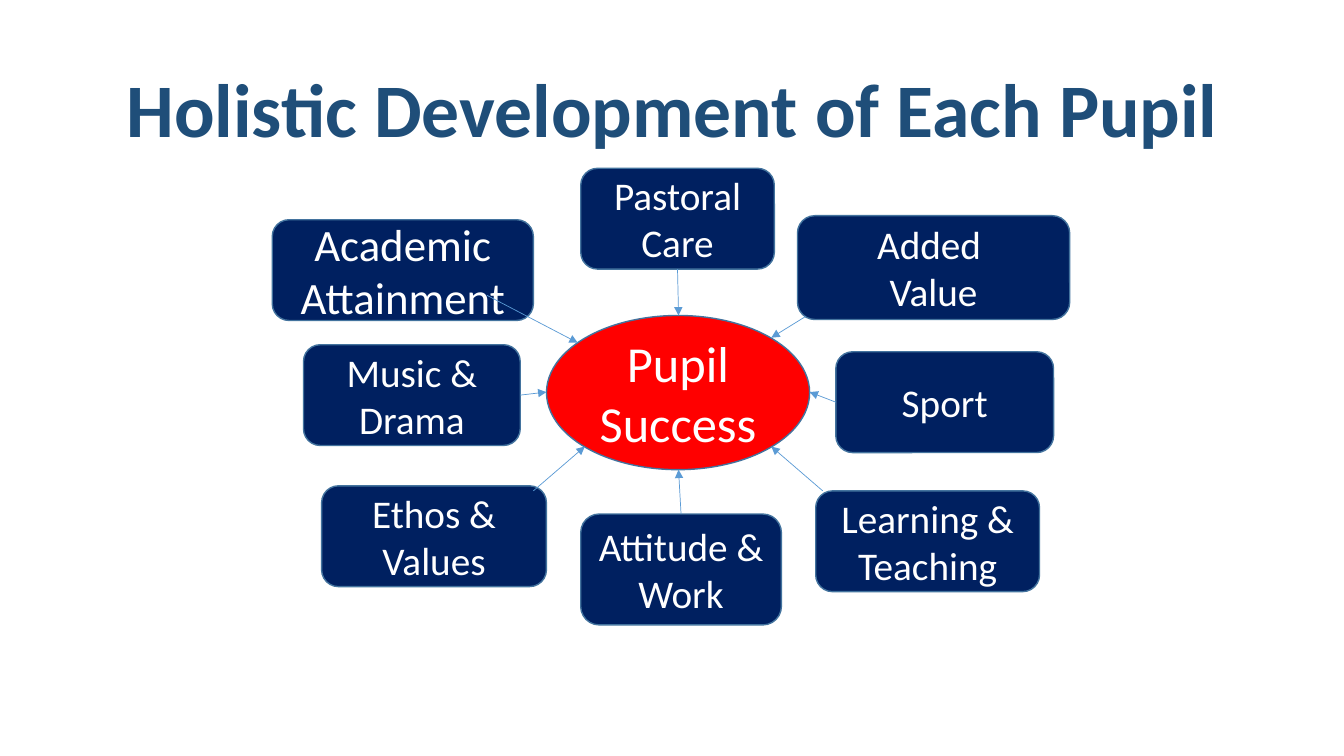
"""Build a slide with eight factors pointing at pupil success."""
from lxml import etree
from pptx import Presentation
from pptx.dml.color import RGBColor
from pptx.enum.shapes import MSO_CONNECTOR, MSO_SHAPE
from pptx.enum.text import MSO_ANCHOR, MSO_AUTO_SIZE, PP_ALIGN
from pptx.oxml.ns import qn
from pptx.util import Inches, Pt

NAVY = RGBColor(0x00, 0x20, 0x60)
RED = RGBColor(0xFF, 0x00, 0x00)
WHITE = RGBColor(0xFF, 0xFF, 0xFF)
TITLE_BLUE = RGBColor(0x1F, 0x4E, 0x79)
OUTLINE = RGBColor(0x43, 0x73, 0x9E)
ARROW_BLUE = RGBColor(0x5B, 0x9B, 0xD5)
TOP, LEFT, BOTTOM, RIGHT = range(4)


def write_text(shape, text, size=28, color=WHITE, bold=False, spacing=1.0):
    frame = shape.text_frame
    frame.text = text
    frame.word_wrap = True
    frame.auto_size = MSO_AUTO_SIZE.NONE
    frame.vertical_anchor = MSO_ANCHOR.MIDDLE
    for paragraph in frame.paragraphs:
        paragraph.alignment = PP_ALIGN.CENTER
        paragraph.line_spacing = spacing
        for run in paragraph.runs:
            run.font.name = "Calibri"
            run.font.size = Pt(size)
            run.font.bold = bold
            run.font.color.rgb = color


def add_bubble(kind, box, fill, text, size):
    shape = slide.shapes.add_shape(kind, *map(Inches, box))
    shape.shadow.inherit = False
    shape.fill.solid()
    shape.fill.fore_color.rgb = fill
    shape.line.color.rgb = OUTLINE
    shape.line.width = Pt(1)
    write_text(shape, text, size=size)
    return shape


presentation = Presentation()
presentation.slide_width = Inches(13.33)
presentation.slide_height = Inches(7.5)
slide = presentation.slides.add_slide(presentation.slide_layouts[5])

title = slide.shapes.title
title.left, title.top = Inches(0.92), Inches(0.4)
title.width, title.height = Inches(11.5), Inches(1.45)
write_text(title, "Holistic Development of Each Pupil", size=54,
           color=TITLE_BLUE, bold=True, spacing=0.9)

add_bubble(MSO_SHAPE.OVAL, (5.42, 3.13, 2.61, 1.53), RED, "Pupil Success", 36)

# text, size, box, arrow start, arrow tip, joined side
factors = [
    ("Added \nValue", 28, (7.91, 2.14, 2.7, 1.03), (7.99, 3.14), (7.65, 3.35), None),
    ("Pastoral Care", 28, (5.76, 1.67, 1.92, 1), (6.72, 2.67), (6.73, 3.13), BOTTOM),
    ("Attitude & Work", 28, (5.76, 5.1, 1.99, 1.1), (6.75, 5.1), (6.73, 4.66), TOP),
    ("Ethos & Values", 28, (3.19, 4.82, 2.23, 1), (5.29, 4.87), (5.8, 4.43), None),
    ("Academic Attainment", 32, (2.7, 2.18, 2.59, 1), (4.83, 2.93), (5.73, 3.4), None),
    ("Learning & Teaching", 28, (8.09, 4.87, 2.22, 1), (8.16, 4.87), (7.65, 4.43), None),
    ("Music & Drama", 28, (3.01, 3.42, 2.15, 1), (5.16, 3.92), (5.42, 3.89), RIGHT),
    ("Sport", 28, (8.29, 3.49, 2.16, 1), (8.29, 3.99), (8.03, 3.89), LEFT),
]
bubbles = [add_bubble(MSO_SHAPE.ROUNDED_RECTANGLE, box, NAVY, text, size)
           for text, size, box, *_ in factors]

for bubble, (*_, start, tip, side) in zip(bubbles, factors):
    arrow = slide.shapes.add_connector(MSO_CONNECTOR.STRAIGHT, *map(Inches, start + tip))
    if side is not None:
        arrow.begin_connect(bubble, side)
    arrow.line.color.rgb = ARROW_BLUE
    arrow.line.width = Pt(0.5)
    properties = arrow.element.spPr
    etree.SubElement(properties.find(qn("a:ln")), qn("a:tailEnd"), type="triangle")
    etree.SubElement(properties, qn("a:effectLst"))

presentation.save("out.pptx")
